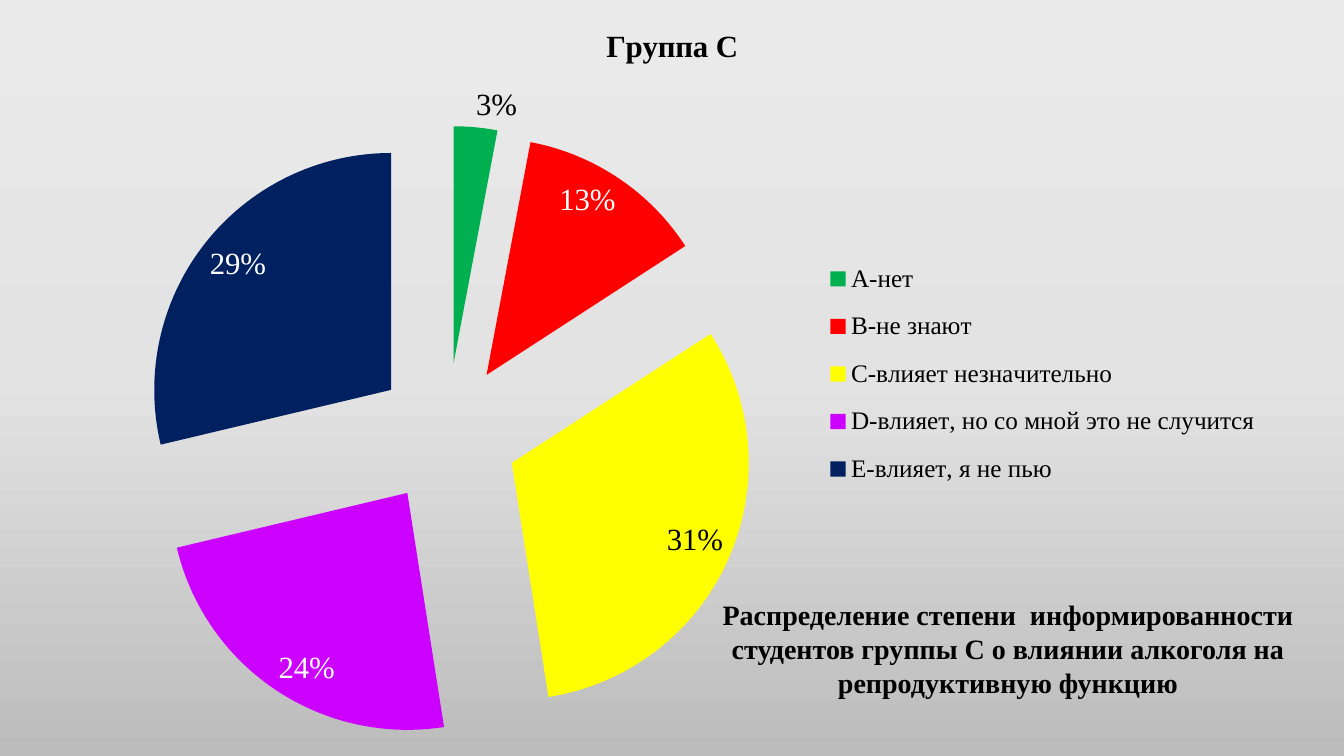
from copy import deepcopy

from lxml import etree
from pptx import Presentation
from pptx import util as u
from pptx.chart.data import CategoryChartData
from pptx.dml.color import RGBColor
from pptx.enum import chart as ch, text
from pptx.oxml.ns import qn

PX = 9525 * 960 // 1008  # slide measured at 1344 x 756 px
WIDTH, HEIGHT = 1344, 756
FONT = "Times New Roman"
BLACK, WHITE = "000000", "FFFFFF"
# answer, value, label, slice colour, label colour
ANSWERS = [
    ("А-нет", 3, "3%", "00B050", BLACK),
    ("В-не знают", 13, "13%", "FF0000", WHITE),
    ("С-влияет незначительно", 32, "31%", "FFFF00", BLACK),
    ("D-влияет, но со мной это не случится", 24, "24%", "CC00FF", WHITE),
    ("Е-влияет, я не пью", 29, "29%", "002060", WHITE),
]


def px(*lengths):
    return [u.Emu(round(n * u.Inches(13.33) / WIDTH)) for n in lengths]


def rgb(hex_code):
    return RGBColor.from_string(hex_code)


def set_font(font, size, color=BLACK, bold=False):
    font.name, font.size, font.bold = FONT, u.Pt(size), bold
    font.color.rgb = rgb(color)


def paint_background(slide):
    fill = slide.background.fill
    fill.gradient()
    fill.gradient_angle = 270
    last = fill.gradient_stops[1]._gs
    last.addprevious(deepcopy(last))
    for stop, position, color in zip(fill.gradient_stops, (0, 0.5, 1),
                                     ("EBEAEA", "E4E3E3", "BDBCBC")):
        stop.position = position
        stop.color.rgb = rgb(color)


def place(layout, box, inner=False):
    """Fix a chart part at a px box within the slide-sized chart."""
    for old in list(layout):
        layout.remove(old)
    manual = etree.SubElement(layout, qn("c:manualLayout"))
    left, top, width, height = box
    settings = [("layoutTarget", "inner")] if inner else []
    settings += [("xMode", "edge"), ("yMode", "edge"),
                 ("x", round(left / WIDTH, 4)), ("y", round(top / HEIGHT, 4)),
                 ("w", round(width / WIDTH, 4)), ("h", round(height / HEIGHT, 4))]
    for tag, value in settings:
        etree.SubElement(manual, qn("c:" + tag)).set("val", str(value))


def layout_of(part, before):
    """Return the part's layout element, adding it ahead of or after a sibling."""
    layout = part.find(qn("c:layout"))
    if layout is None:
        layout = etree.Element(qn("c:layout"))
        part.insert(before, layout)
    return layout


def style_slices(series):
    etree_explosion = etree.Element(qn("c:explosion"))
    etree_explosion.set("val", "30")
    for index, (_, _, label, color, label_color) in enumerate(ANSWERS):
        point = series.points[index]
        point.format.fill.solid()
        point.format.fill.fore_color.rgb = rgb(color)
        point.format.line.fill.background()
        caption = point.data_label.text_frame
        caption.text = label
        set_font(caption.paragraphs[0].runs[0].font, 22, label_color)
        point.data_label.position = (ch.XL_LABEL_POSITION.INSIDE_END if index
                                     else ch.XL_LABEL_POSITION.OUTSIDE_END)
    series._element.find(qn("c:dPt")).addprevious(etree_explosion)
    labels = series.data_labels
    labels.show_percentage, labels.show_value = True, False
    set_font(labels.font, 22, WHITE)


def add_answers_pie(slide, box):
    data = CategoryChartData()
    data.categories = [answer[0] for answer in ANSWERS]
    data.add_series("Группа С", [answer[1] for answer in ANSWERS])
    chart = slide.shapes.add_chart(ch.XL_CHART_TYPE.PIE, *px(*box), data).chart
    set_font(chart.font, 18)
    chart.has_title = True
    chart.chart_title.include_in_layout = False
    chart.chart_title.text_frame.text = "Группа С"
    heading = chart.chart_title.text_frame.paragraphs[0]
    set_font(heading.runs[0].font, 22, bold=True)

    chart.plots[0].vary_by_categories = True
    style_slices(chart.plots[0].series[0])
    plot_area = chart._chartSpace.chart.plotArea
    place(layout_of(plot_area, 0), (139, 126, 616, 616), inner=True)

    chart.has_legend = True
    legend = chart.legend
    legend.position = ch.XL_LEGEND_POSITION.RIGHT
    legend.include_in_layout = False
    set_font(legend.font, 18)
    place(layout_of(legend._element, 1), (820, 245, 445, 258))


def add_conclusion(slide, box):
    frame = slide.shapes.add_textbox(*px(*box)).text_frame
    frame.word_wrap = True
    frame.text = ("Распределение степени  информированности студентов группы С "
                  "о влиянии алкоголя на репродуктивную функцию")
    paragraph = frame.paragraphs[0]
    paragraph.alignment = text.PP_ALIGN.CENTER
    set_font(paragraph.font, 20, bold=True)


def main():
    deck = Presentation()
    deck.slide_width, deck.slide_height = px(WIDTH, HEIGHT)
    slide = deck.slides.add_slide(deck.slide_layouts[6])
    paint_background(slide)
    add_answers_pie(slide, (0, 0, WIDTH, HEIGHT))
    add_conclusion(slide, (672, 593, 672, 112))
    deck.save("out.pptx")


if __name__ == "__main__":
    main()
